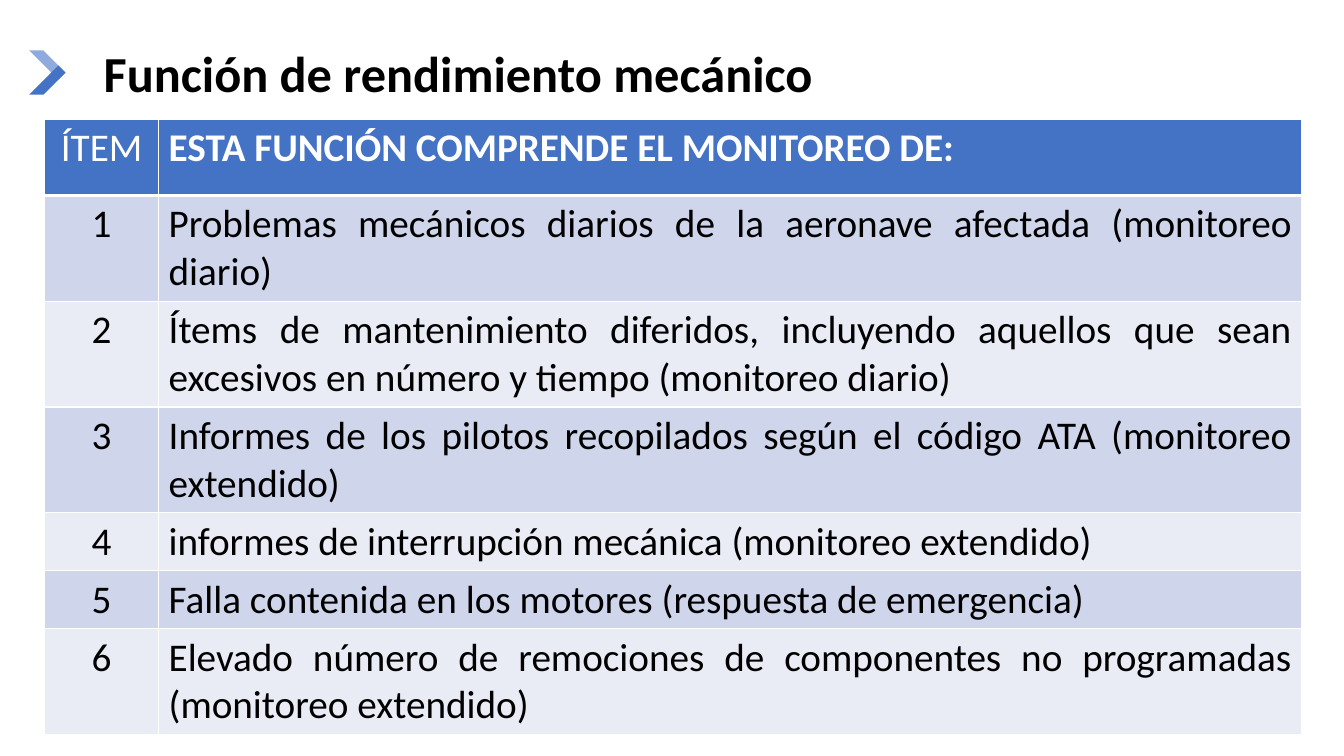
"""Build the slide on the mechanical performance function."""
from lxml import etree
from pptx import Presentation
from pptx.dml.color import RGBColor
from pptx.enum.text import MSO_ANCHOR, PP_ALIGN
from pptx.oxml.ns import qn
from pptx.util import Pt

LEFT, CENTER, JUST = PP_ALIGN.LEFT, PP_ALIGN.CENTER, PP_ALIGN.JUSTIFY
MIDDLE = MSO_ANCHOR.MIDDLE

TITLE = "Función de rendimiento mecánico"
HEAD = ("ÍTEM", "ESTA FUNCIÓN COMPRENDE EL MONITOREO DE:")
ITEMS = [
    "Problemas mecánicos diarios de la aeronave afectada (monitoreo diario)",
    "Ítems de mantenimiento diferidos, incluyendo aquellos que sean excesivos en número y tiempo (monitoreo diario)",
    "Informes de los pilotos recopilados según el código ATA (monitoreo extendido)",
    "informes de interrupción mecánica (monitoreo extendido)",
    "Falla contenida en los motores (respuesta de emergencia)",
    "Elevado número de remociones de componentes no programadas (monitoreo extendido)",
]
THEME = {
    "font": "Calibri", "title": 36, "body": 28,
    "ink": "000000", "white": "FFFFFF", "blue": "4472C4", "pale": "8FAADC",
    "bands": ("CFD5EA", "E9EBF5"),
}
SLIDE = (960, 540)
TITLE_BOX = (67, 23.8, 862.6, 61.2)
TABLE_POS = (31.9, 85.2)
COLS = (81.4, 816.5)
HEAD_H, ONE_LINE, TWO_LINES = 54.4, 41.4, 75.6
LINE_CHARS = 60
WING = [(20.9, 36), (41.8, 56.9), (46.8, 51.84), (31, 36)]
AXIS = 51.84


def put_text(frame, text, size=THEME["body"], color=THEME["ink"],
             bold=False, align=LEFT, space=None):
    para = frame.paragraphs[0]
    para.alignment = align
    if space:
        para.line_spacing = space
    run = para.add_run()
    run.text = text
    font = run.font
    font.name, font.size, font.bold = THEME["font"], Pt(size), bold
    font.color.rgb = RGBColor.from_string(color)


def paint(thing, color):
    thing.fill.solid()
    thing.fill.fore_color.rgb = RGBColor.from_string(color)


def add_wing(slide, points, color):
    dots = [(Pt(x), Pt(y)) for x, y in points]
    pen = slide.shapes.build_freeform(*dots[0])
    pen.add_line_segments(dots[1:], close=True)
    wing = pen.convert_to_shape()
    paint(wing, color)
    wing.line.fill.background()
    wing.shadow.inherit = False


def add_edges(cell, widths):
    props = cell._tc.get_or_add_tcPr()
    for side, width in zip("LRTB", widths):
        edge = etree.SubElement(props, qn(f"a:ln{side}"), w=str(Pt(width)))
        fill = etree.SubElement(edge, qn("a:solidFill"))
        etree.SubElement(fill, qn("a:srgbClr"), val=THEME["white"])


def add_title(slide):
    box = slide.shapes.add_textbox(*map(Pt, TITLE_BOX))
    frame = box.text_frame
    frame.word_wrap = True
    frame.vertical_anchor = MIDDLE
    put_text(frame, TITLE, size=THEME["title"], bold=True, space=0.9)


def add_grid(slide):
    rows = [HEAD] + [(str(n), item) for n, item in enumerate(ITEMS, 1)]
    highs = [HEAD_H] + [TWO_LINES if len(item) > LINE_CHARS else ONE_LINE
                        for item in ITEMS]
    size = (sum(COLS), sum(highs))
    table = slide.shapes.add_table(
        len(rows), len(COLS), *map(Pt, TABLE_POS + size)).table
    for col, width in zip(table.columns, COLS):
        col.width = Pt(width)
    for r, (row, high) in enumerate(zip(rows, highs)):
        table.rows[r].height = Pt(high)
        head = r == 0
        back = THEME["blue"] if head else THEME["bands"][(r - 1) % 2]
        ink = THEME["white"] if head else THEME["ink"]
        top, base = (3 if r == 1 else 1), (3 if head else 1)
        for c, text in enumerate(row):
            cell = table.cell(r, c)
            add_edges(cell, (1, 1, top, base))
            paint(cell, back)
            put_text(cell.text_frame, text, color=ink,
                     bold=head and c == 1, align=JUST if c else CENTER)


def main():
    deck = Presentation()
    deck.slide_width, deck.slide_height = map(Pt, SLIDE)
    slide = deck.slides.add_slide(deck.slide_layouts[6])
    add_wing(slide, WING, THEME["pale"])
    add_wing(slide, [(x, 2 * AXIS - y) for x, y in WING], THEME["blue"])
    add_title(slide)
    add_grid(slide)
    deck.save("out.pptx")


if __name__ == "__main__":
    main()
